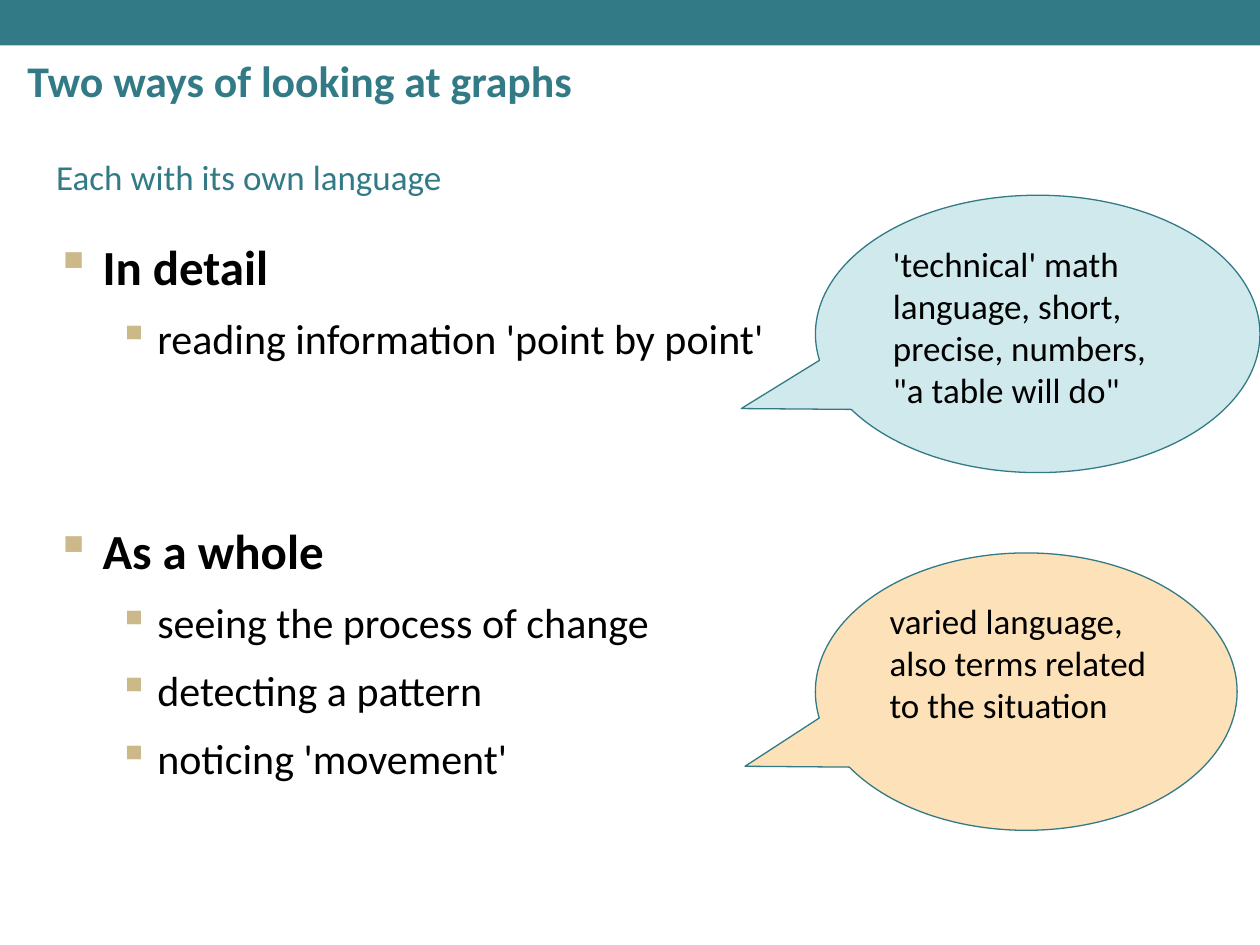
import pptx
import pptx.util
import pptx.dml.color
import pptx.enum.shapes
import pptx.enum.text
import pptx.oxml.ns
import lxml.etree

Pt = pptx.util.Pt
SHAPE = pptx.enum.shapes.MSO_SHAPE
ANCHOR = pptx.enum.text.MSO_ANCHOR
qn = pptx.oxml.ns.qn
COLORS = {"teal": "327A86", "black": "000000", "tan": "CBB98A",
          "blue": "D0E9ED", "orange": "FCE1B9"}


def rgb(name):
    return pptx.dml.color.RGBColor.from_string(COLORS[name])


def write(p, text, color, **font):
    r = p.add_run()
    r.text = text
    for key, value in {"name": "Calibri", **font}.items():
        setattr(r.font, key, value)
    r.font.color.rgb = rgb(color)


prs = pptx.Presentation()
prs.slide_width, prs.slide_height = Pt(720), Pt(540)
s = prs.slides.add_slide(prs.slide_layouts[6])

sp = s.shapes.add_shape(SHAPE.RECTANGLE, 0, 0, Pt(720), Pt(26))
sp.shadow.inherit = False
sp.fill.solid()
sp.fill.fore_color.rgb = rgb("teal")
sp.line.fill.background()

frames = []
for box, fmt in [
    ((8.6, 26, 698, 39), {"vertical_anchor": ANCHOR.MIDDLE}),
    ((25, 88.6, 664, 22.3), {"margin_top": 0}),
    ((24.5, 135, 669, 394), {"margin_top": 0}),
]:
    tf = s.shapes.add_textbox(*map(Pt, box)).text_frame
    for key, value in {"word_wrap": True, **fmt}.items():
        setattr(tf, key, value)
    frames.append(tf)
title, subtitle, body = frames

write(title.paragraphs[0], "Two ways of looking at graphs", "teal", size=Pt(25), bold=True)
write(subtitle.paragraphs[0], "Each with its own language", "teal", size=Pt(20))

LEVELS = [{"indent": (27, -27), "size": Pt(28), "bold": True},
          {"indent": (58.3, -22.3), "size": Pt(24), "bold": False}]
for i, (level, before, text) in enumerate([
    (0, 0, "In detail"),
    (1, 4, "reading information 'point by point'"),
    (0, 84, "As a whole"),
    (1, 4, "seeing the process of change"),
    (1, 4, "detecting a pattern"),
    (1, 4, "noticing 'movement'"),
]):
    p = body.paragraphs[0] if i == 0 else body.add_paragraph()
    fmt = LEVELS[level]
    p.level = level
    pPr = p._p.get_or_add_pPr()
    for key, value in zip(("marL", "indent"), fmt["indent"]):
        pPr.set(key, str(int(Pt(value))))
    buClr = lxml.etree.SubElement(pPr, qn("a:buClr"))
    lxml.etree.SubElement(buClr, qn("a:srgbClr"), val=COLORS["tan"])
    lxml.etree.SubElement(pPr, qn("a:buChar"), char="▪")
    p.space_before, p.space_after = Pt(before), Pt(6)
    write(p, text, "black", size=fmt["size"], bold=fmt["bold"])

for top, width, fill, text in [
    (111.6, 254, "blue", "'technical' math language, short, precise, numbers, \"a table will do\""),
    (316, 241, "orange", "varied language, also terms related to the situation"),
]:
    sp = s.shapes.add_shape(SHAPE.OVAL_CALLOUT, Pt(466), Pt(top), Pt(width), Pt(158.5))
    sp.shadow.inherit = False
    sp.adjustments[0], sp.adjustments[1] = -0.667, 0.269
    sp.fill.solid()
    sp.fill.fore_color.rgb = rgb(fill)
    sp.line.color.rgb = rgb("teal")
    sp.line.width = Pt(0.75)
    tf = sp.text_frame
    tf.word_wrap = True
    tf.vertical_anchor = ANCHOR.TOP
    p = tf.paragraphs[0]
    p.alignment = pptx.enum.text.PP_ALIGN.LEFT
    write(p, text, "black", size=Pt(20))

prs.save("out.pptx")
